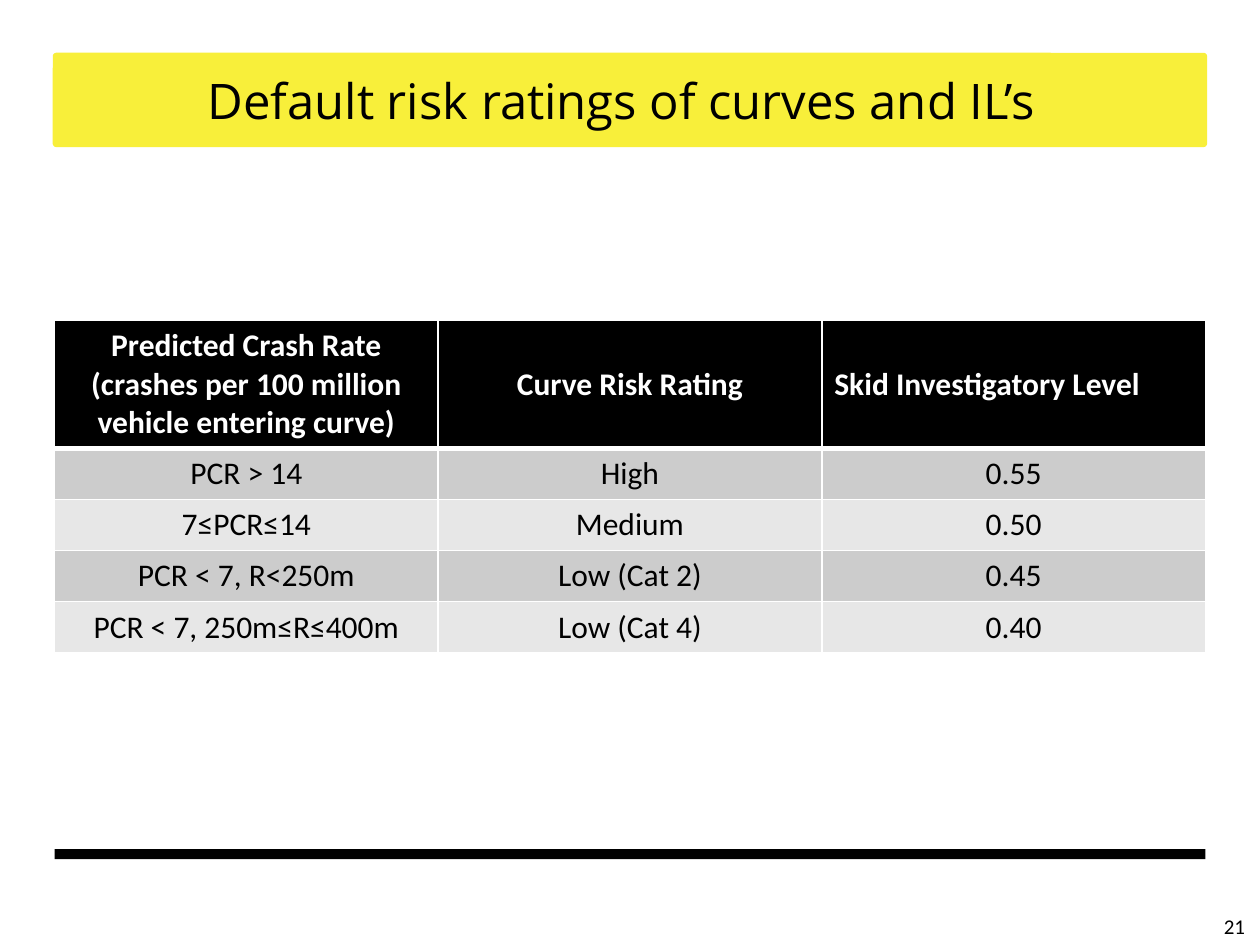
from lxml import etree
from pptx import Presentation
from pptx.dml.color import RGBColor
from pptx.enum.shapes import MSO_SHAPE
from pptx.enum.text import MSO_ANCHOR, PP_ALIGN
from pptx.oxml.ns import qn
from pptx.util import Cm, Pt

ROUNDED, RECTANGLE = MSO_SHAPE.ROUNDED_RECTANGLE, MSO_SHAPE.RECTANGLE
LEFT, CENTER, RIGHT = PP_ALIGN.LEFT, PP_ALIGN.CENTER, PP_ALIGN.RIGHT
TOP, MIDDLE = MSO_ANCHOR.TOP, MSO_ANCHOR.MIDDLE

COLORS = {"yellow": "F8EF3A", "black": "000000", "white": "FFFFFF",
          "dark band": "CCCCCC", "light band": "E7E7E7"}
MARGIN, WIDTH = Cm(1.1), Cm(23.2)


def color(name):
    return RGBColor.from_string(COLORS[name])


def write(frame, lines, align, ink, **format_values):
    for index, line in enumerate(lines):
        para = frame.paragraphs[0] if index == 0 else frame.add_paragraph()
        para.alignment = align
        span = para.add_run()
        span.text = line
        span.font.color.rgb = color(ink)
        for name, value in format_values.items():
            setattr(span.font, name, value)


deck = Presentation()
deck.slide_width, deck.slide_height = Cm(25.4), Cm(19.05)
page = deck.slides.add_slide(deck.slide_layouts[5])

# Title banner and footer rule
bars = [(ROUNDED, Cm(1.1), Cm(1.83), "yellow"),
        (RECTANGLE, Cm(17.12), Cm(0.2), "black")]
for kind, top, height, fill in bars:
    bar = page.shapes.add_shape(kind, MARGIN, top, WIDTH, height)
    bar.shadow.inherit = False
    bar.fill.solid()
    bar.fill.fore_color.rgb = color(fill)
    if kind == ROUNDED:
        bar.adjustments[0] = 0.02
        bar.line.color.rgb = color(fill)
        bar.line.width = Pt(2)
    else:
        bar.line.fill.background()

# Title, brought in front of the banner
title = page.shapes.title
title.left, title.top, title.width, title.height = MARGIN, Cm(1.1), Cm(22.86), Cm(1.83)
title.text_frame.vertical_anchor = MIDDLE
write(title.text_frame, ["Default risk ratings of curves and IL’s"], CENTER, "black",
      name="Open Sans", size=Pt(28))
page.shapes._spTree.append(title._element)

# Risk rating table
rows = [
    (["Predicted Crash Rate", "(crashes per 100 million vehicle entering curve)"],
     ["Curve Risk Rating"], ["Skid Investigatory Level"]),
    (["PCR > 14"], ["High"], ["0.55"]),
    (["7≤PCR≤14"], ["Medium"], ["0.50"]),
    (["PCR < 7, R<250m"], ["Low (Cat 2)"], ["0.45"]),
    (["PCR < 7, 250m≤R≤400m"], ["Low (Cat 4)"], ["0.40"]),
]
HEADER_HEIGHT, ROW_HEIGHT = Cm(2.51), Cm(1.03)
table = page.shapes.add_table(len(rows), 3, MARGIN, Cm(6.46), WIDTH,
                              HEADER_HEIGHT + 4 * ROW_HEIGHT).table
for column in table.columns:
    column.width = WIDTH // 3

for row_index, row in enumerate(rows):
    header = row_index == 0
    table.rows[row_index].height = HEADER_HEIGHT if header else ROW_HEIGHT
    band = "black" if header else "dark band" if row_index % 2 else "light band"
    for column_index, lines in enumerate(row):
        cell = table.cell(row_index, column_index)
        # White cell borders, thicker under the header
        properties = cell._tc.get_or_add_tcPr()
        for side in ("L", "R", "T", "B"):
            thick = (row_index, side) in ((0, "B"), (1, "T"))
            border = etree.SubElement(properties, qn(f"a:ln{side}"),
                                      w=str(Pt(3 if thick else 1)))
            paint = etree.SubElement(border, qn("a:solidFill"))
            etree.SubElement(paint, qn("a:srgbClr"), val=COLORS["white"])
        cell.fill.solid()
        cell.fill.fore_color.rgb = color(band)
        cell.vertical_anchor = MIDDLE if header else TOP
        align = LEFT if header and column_index == 2 else CENTER
        write(cell.text_frame, lines, align, "white" if header else "black",
              name="Calibri", size=Pt(18), bold=header)

# Page number
box = page.shapes.add_textbox(Cm(24.13), Cm(18.29), Cm(1.22), Cm(0.76))
box.text_frame.word_wrap = True
write(box.text_frame, ["21"], RIGHT, "black", name="Calibri", size=Pt(12))

deck.save("out.pptx")
